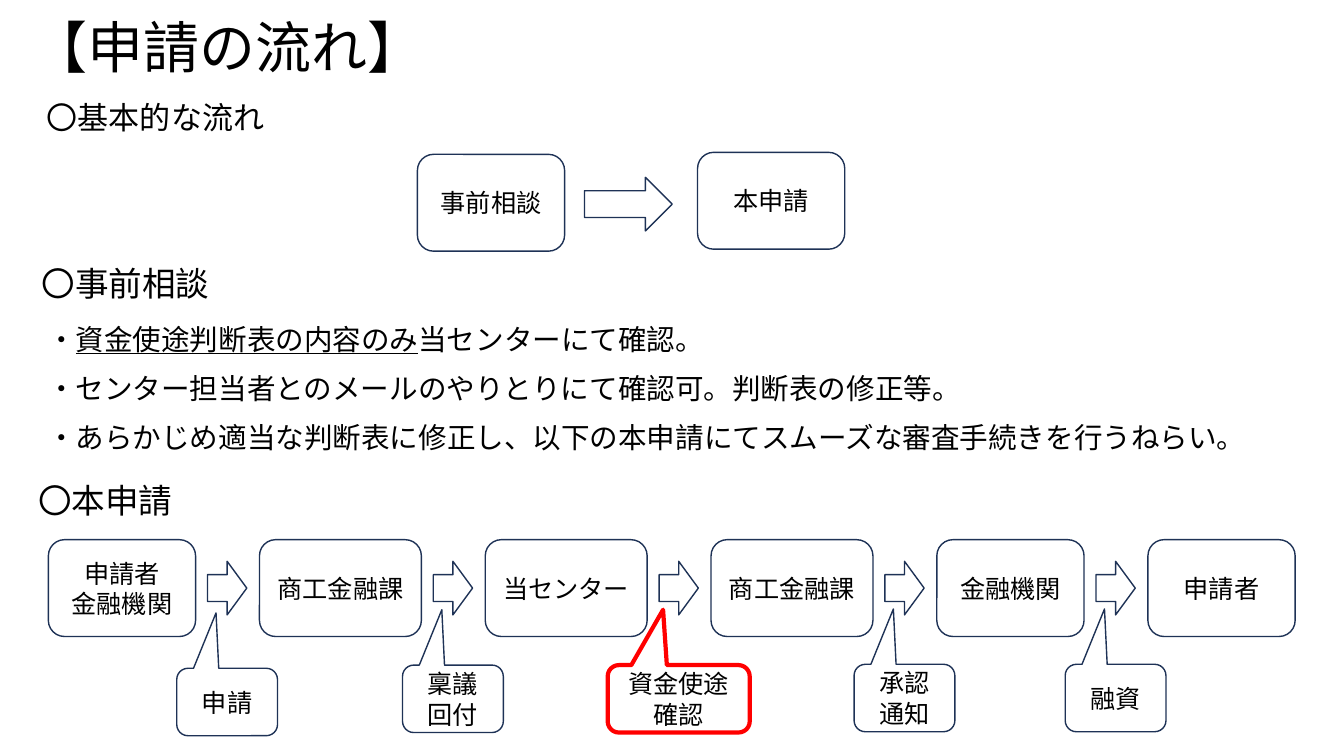
from pptx import Presentation
from pptx.dml.color import RGBColor as Rgb
from pptx.enum.shapes import MSO_SHAPE as Kind
from pptx.enum.text import MSO_ANCHOR as Anchor, PP_ALIGN as Align
from pptx.oxml.ns import qn
from pptx.util import Cm, Pt

HUES = {"ink": "000000", "fill": "FFFFFF", "edge": "1E3256", "alert": "FF0000"}
CJK = "Noto Sans CJK JP"
HEADS = [
    ("【申請の流れ】", -1.04, 0.41, 13.56, 2.03, 40),
    ("〇基本的な流れ", 0.86, 2.49, 6.12, 1.24, 22.2),
    ("〇事前相談", 0.61, 6.65, 5.11, 1.24, 24),
    ("〇本申請", 0.1, 12.12, 5.11, 1.24, 24),
]
NOTES = [
    [("・", False), ("資金使途判断表の内容のみ", True), ("当センターにて確認。", False)],
    [("・センター担当者とのメールのやりとりにて確認可。判断表の修正等。", False)],
    [("・あらかじめ適当な判断表に修正し、以下の本申請にてスムーズな審査手続きを行うねらい。", False)],
]
BASIC = [("事前相談", 10.52, 3.89), ("本申請", 17.58, 3.84)]
STEPS = [
    ("申請者\n金融機関", 3.71), ("商工金融課", 4.08), ("当センター", 4.08),
    ("商工金融課", 4.08), ("金融機関", 3.71), ("申請者", 3.71),
]
CALLS = [
    ("申請", 2.54, 16.84, "edge", 1),
    ("稟議回付", 2.54, 16.76, "edge", 1),
    ("資金使途確認", 3.58, 16.76, "alert", 3),
    ("承認通知", 2.54, 16.74, "edge", 1),
    ("融資", 2.54, 16.74, "edge", 1),
]
LEFT, TOP, GAP, PAD = 1.22, 13.6, 1.61, 0.3
BOX, ARROW, TALL, CALL = 2.44, 0.99, 1.35, 1.7


def put(para, text, size, face=CJK, **marks):
    run = para.add_run()
    run.text = text
    form = {"name": face, "size": Pt(size), **marks}
    for key, val in form.items():
        setattr(run.font, key, val)
    run.font.color.rgb = Rgb.from_string(HUES["ink"])
    east = run.font._element.makeelement(qn("a:ea"), {"typeface": face})
    run.font._element.find(qn("a:latin")).addnext(east)


def frame(slide, x, y, w, h):
    text = slide.shapes.add_textbox(Cm(x), Cm(y), Cm(w), Cm(h)).text_frame
    form = {"word_wrap": True, "margin_left": Cm(0.2), "margin_right": Cm(0.2),
            "margin_top": Cm(0.1), "margin_bottom": Cm(0.1)}
    for key, val in form.items():
        setattr(text, key, val)
    return text


def draw(slide, kind, x, y, w, h, text="", hue="edge", wide=1):
    shape = slide.shapes.add_shape(kind, Cm(x), Cm(y), Cm(w), Cm(h))
    shape.shadow.inherit = False
    shape.fill.solid()
    shape.fill.fore_color.rgb = Rgb.from_string(HUES["fill"])
    shape.line.color.rgb = Rgb.from_string(HUES[hue])
    shape.line.width = Pt(wide)
    body = shape.text_frame
    body.word_wrap, body.vertical_anchor = True, Anchor.MIDDLE
    for num, line in enumerate(text.split("\n") if text else []):
        para = body.add_paragraph() if num else body.paragraphs[0]
        para.alignment = Align.CENTER
        put(para, line, 18)
    return shape


def main():
    """Build the slide on how an application proceeds."""
    deck = Presentation()
    deck.slide_width, deck.slide_height = Cm(33.87), Cm(19.05)
    slide = deck.slides.add_slide(deck.slide_layouts[6])

    for text, x, y, w, h, size in HEADS:
        para = frame(slide, x, y, w, h).paragraphs[0]
        para.alignment, para.line_spacing = Align.CENTER, 0.9
        put(para, text, size)

    notes = frame(slide, 0.99, 8.18, 31.42, 3.89)
    for num, parts in enumerate(NOTES):
        para = notes.add_paragraph() if num else notes.paragraphs[0]
        para.line_spacing = 0.8
        if num:
            para.space_before = Pt(15.5)
        for text, under in parts:
            put(para, text, 20.4, "Arial", underline=under)

    for text, x, y in BASIC:
        draw(slide, Kind.ROUNDED_RECTANGLE, x, y, 3.71, BOX, text)
    draw(slide, Kind.RIGHT_ARROW, 14.73, 4.47, 2.21, TALL)

    x, mids = LEFT, []
    for num, (text, w) in enumerate(STEPS):
        draw(slide, Kind.ROUNDED_RECTANGLE, x, TOP, w, BOX, text)
        x += w + GAP
        if num < len(CALLS):
            start = x - GAP + PAD
            draw(slide, Kind.RIGHT_ARROW, start, TOP + (BOX - TALL) / 2, ARROW, TALL)
            mids.append(start + ARROW / 2)

    for mid, (text, w, y, hue, wide) in zip(mids, CALLS):
        call = draw(slide, Kind.ROUNDED_RECTANGULAR_CALLOUT, mid - w / 2, y, w, CALL,
                    text, hue, wide)
        call.adjustments[0], call.adjustments[1] = -0.11, -1.32

    deck.save("out.pptx")


if __name__ == "__main__":
    main()
